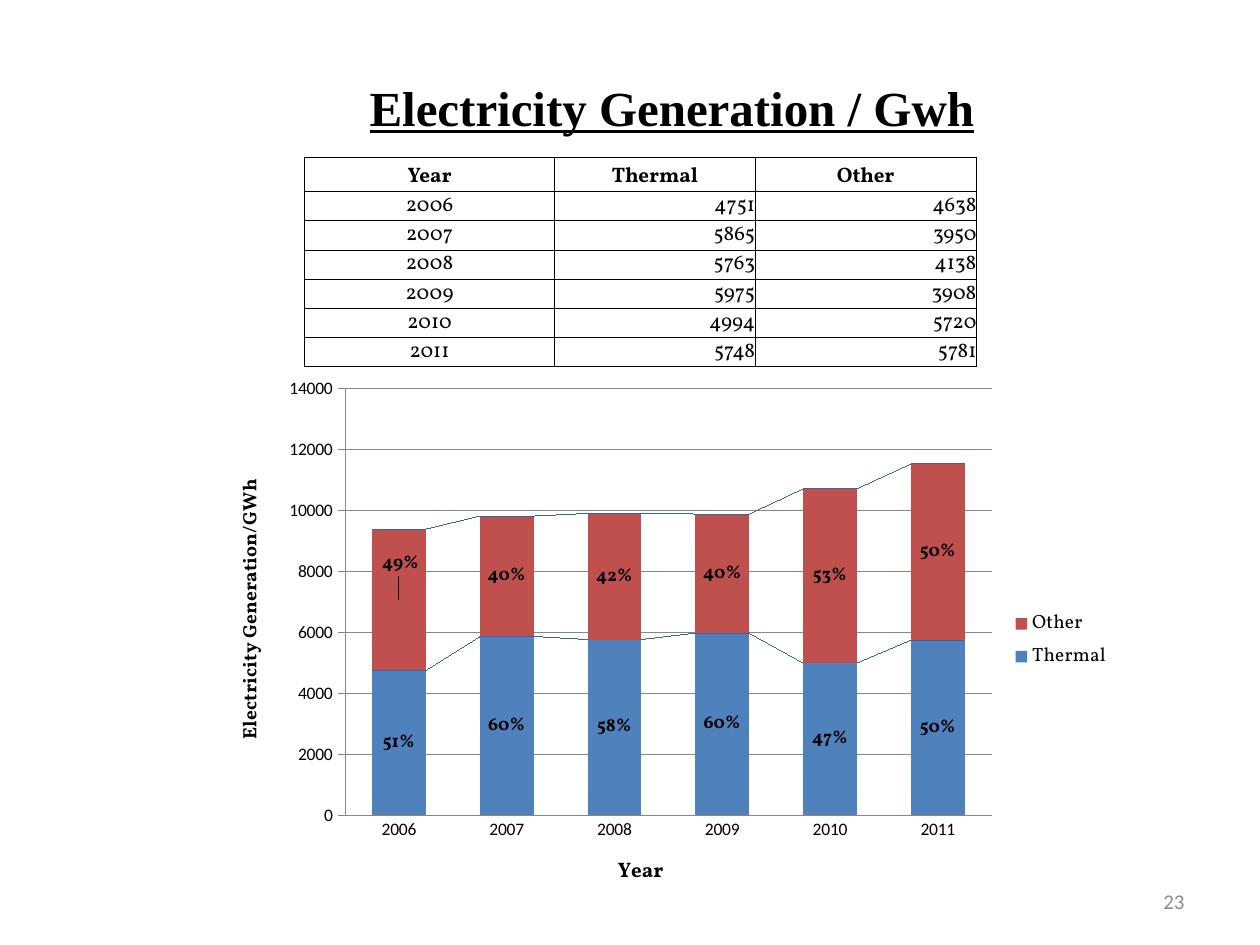
import pptx
import pptx.util
import pptx.chart.data
import pptx.dml.color
import pptx.enum.chart
import pptx.enum.text
import pptx.oxml
import pptx.oxml.ns
from dataclasses import dataclass

Pt = pptx.util.Pt
Align = pptx.enum.text.PP_ALIGN
Anchor = pptx.enum.text.MSO_ANCHOR
Chart = pptx.enum.chart


@dataclass(frozen=True)
class Theme:
    ink: str = "000000"
    grey: str = "8C8C8C"
    rule: str = "868686"
    link: str = "4A7EBB"
    fills: tuple = ("4F81BD", "C0504D")
    head: str = "Times New Roman"
    body: str = "Vollkorn"
    base: str = "Calibri"
    big: float = 28
    mid: float = 12
    note: float = 11
    mark: float = 10.5
    tick: float = 10


THEME = Theme()
YEARS = ["2006", "2007", "2008", "2009", "2010", "2011"]
POWER = {
    "Thermal": [4751, 5865, 5763, 5975, 4994, 5748],
    "Other": [4638, 3950, 4138, 3908, 5720, 5781],
}


def apply(item, form):
    for key, val in form.items():
        setattr(item, key, val)


def paint(color):
    return pptx.dml.color.RGBColor.from_string(color)


def style(font, name, size, color=THEME.ink, **more):
    apply(font, dict(name=name, size=Pt(size), **more))
    font.color.rgb = paint(color)


def write(frame, text, align, name, size, **more):
    para = frame.paragraphs[0]
    para.alignment = align
    run = para.add_run()
    run.text = text
    style(run.font, name, size, **more)


def node(body):
    return pptx.oxml.parse_xml(body.replace(
        ">", " " + pptx.oxml.ns.nsdecls("a", "c") + ">", 1))


def place(part, box, spot, index=1, tags=""):
    for old in part.findall(pptx.oxml.ns.qn("c:layout")):
        part.remove(old)
    for key, val, full in zip("xywh", spot, box[2:] * 2):
        tags += f'<c:{key} val="{Pt(val) / full:.4f}"/>'
    part.insert(index, node(
        f"<c:layout><c:manualLayout>{tags}</c:manualLayout></c:layout>"))


def add_cell(cell, text, align, name, size, edge=True, **more):
    apply(cell, dict(margin_left=0, margin_top=0, margin_right=0,
                     margin_bottom=0, vertical_anchor=Anchor.BOTTOM))
    write(cell.text_frame, text, align, name, size, **more)
    props = cell._tc.get_or_add_tcPr()
    ink = f'<a:solidFill><a:srgbClr val="{THEME.ink}"/></a:solidFill>'
    for side in "LRTB":
        props.append(node(
            f'<a:ln{side} w="{Pt(0.5)}">{ink if edge else "<a:noFill/>"}'
            f'</a:ln{side}>'))
    cell.fill.background()


def add_table(slide, box, rows, cols):
    grid = slide.shapes.add_table(rows, cols, *box).table
    apply(grid, dict(first_row=False, horz_banding=False))
    return grid


def add_title(slide, box):
    cell = add_table(slide, box, 1, 1).cell(0, 0)
    add_cell(cell, "Electricity Generation / Gwh", Align.CENTER, THEME.head,
             THEME.big, edge=False, bold=True, underline=True)


def add_grid(slide, box):
    rows = [["Year", *POWER]]
    rows += [[str(val) for val in row] for row in zip(YEARS, *POWER.values())]
    grid = add_table(slide, box, len(rows), len(rows[0]))
    for col, wide in zip(grid.columns, (143, 114.5, 126.5)):
        col.width = Pt(wide)
    for r, row in enumerate(rows):
        grid.rows[r].height = Pt(16.67 if r else 19.5)
        for c, text in enumerate(row):
            align = Align.RIGHT if r and c else Align.CENTER
            add_cell(grid.cell(r, c), text, align, THEME.body, THEME.mid,
                     bold=r == 0)


def rule(line):
    line.color.rgb = paint(THEME.rule)
    line.width = Pt(0.5)


def add_axis(axis, text, size, box, spot, tick):
    apply(axis, dict(major_tick_mark=tick,
                     minor_tick_mark=Chart.XL_TICK_MARK.NONE))
    style(axis.tick_labels.font, THEME.base, THEME.tick)
    write(axis.axis_title.text_frame, text, Align.CENTER,
          THEME.body, size, bold=True)
    place(axis.axis_title._element, box, spot, tags=EDGE)
    rule(axis.format.line)


EDGE = '<c:xMode val="edge"/><c:yMode val="edge"/>'
C15 = "http://schemas.microsoft.com/office/drawing/2012/chart"


def add_marks(series, color):
    series.format.fill.solid()
    series.format.fill.fore_color.rgb = paint(color)
    labels = series.data_labels
    apply(labels, dict(show_value=True,
                       position=Chart.XL_LABEL_POSITION.CENTER))
    style(labels.font, THEME.body, THEME.mark, bold=True)
    for i, val in enumerate(POWER[series.name]):
        share = val / sum(vals[i] for vals in POWER.values())
        label = series.points[i].data_label
        write(label.text_frame, f"{share:.0%}", Align.CENTER,
              THEME.body, THEME.mark, bold=True)
        label.position = Chart.XL_LABEL_POSITION.CENTER
    labels._element.append(node(
        '<c:extLst><c:ext uri="{CE6537A1-D6FC-4f65-9D91-7224C49458BB}" '
        f'xmlns:c15="{C15}"><c15:showLeaderLines val="0"/>'
        '</c:ext></c:extLst>'))


def add_graph(slide, box):
    data = pptx.chart.data.CategoryChartData(number_format="0")
    data.categories = YEARS
    for name, vals in POWER.items():
        data.add_series(name, vals)
    chart = slide.shapes.add_chart(
        Chart.XL_CHART_TYPE.COLUMN_STACKED, *box, data).chart
    style(chart.font, THEME.base, THEME.tick)
    apply(chart, dict(has_title=False, has_legend=True))

    plot = chart.plots[0]
    apply(plot, dict(gap_width=101, overlap=100, vary_by_categories=False))
    for series, color in zip(plot.series, THEME.fills):
        add_marks(series, color)
    first = plot.series[1]._element.xpath(".//c:dLbl")[0]
    place(first, box, (1, -20.6))
    plot._element.find(pptx.oxml.ns.qn("c:overlap")).addnext(node(
        f'<c:serLines><c:spPr><a:ln w="{Pt(0.75)}"><a:solidFill><a:srgbClr '
        f'val="{THEME.link}"/></a:solidFill></a:ln></c:spPr></c:serLines>'))

    tick = Chart.XL_TICK_MARK
    add_axis(chart.category_axis, "Year", THEME.mid, box,
             (231, 276.8), tick.NONE)
    axis = chart.value_axis
    add_axis(axis, "Electricity Generation/GWh", THEME.note, box,
             (12.8, 61.8), tick.OUTSIDE)
    apply(axis, dict(minimum_scale=0, maximum_scale=14000, major_unit=2000))
    rule(axis.major_gridlines.format.line)

    legend = chart.legend
    apply(legend, dict(position=Chart.XL_LEGEND_POSITION.RIGHT,
                       include_in_layout=False))
    style(legend.font, THEME.body, THEME.note)
    place(legend._element, box, (455, 135.6, 62.6, 40.6), tags=EDGE)
    area = chart._chartSpace.xpath(".//c:plotArea")[0]
    place(area, box, (77.2, 12.1, 369.6, 243.8), 0,
          '<c:layoutTarget val="inner"/>' + EDGE)


def add_page(slide, box):
    frame = slide.shapes.add_textbox(*box).text_frame
    apply(frame, dict(word_wrap=True, vertical_anchor=Anchor.MIDDLE))
    write(frame, "23", Align.RIGHT, THEME.base, THEME.mid, color=THEME.grey)


def main():
    deck = pptx.Presentation()
    apply(deck, dict(slide_width=Pt(720), slide_height=Pt(540)))
    slide = deck.slides.add_slide(deck.slide_layouts[6])
    add_page(slide, (Pt(516), Pt(500.5), Pt(168), Pt(28.75)))
    add_graph(slide, (Pt(120), Pt(210), Pt(522), Pt(312)))
    add_grid(slide, (Pt(174), Pt(90), Pt(384), Pt(109.5)))
    add_title(slide, (Pt(192), Pt(42), Pt(384), Pt(36)))
    deck.save("out.pptx")


if __name__ == "__main__":
    main()
